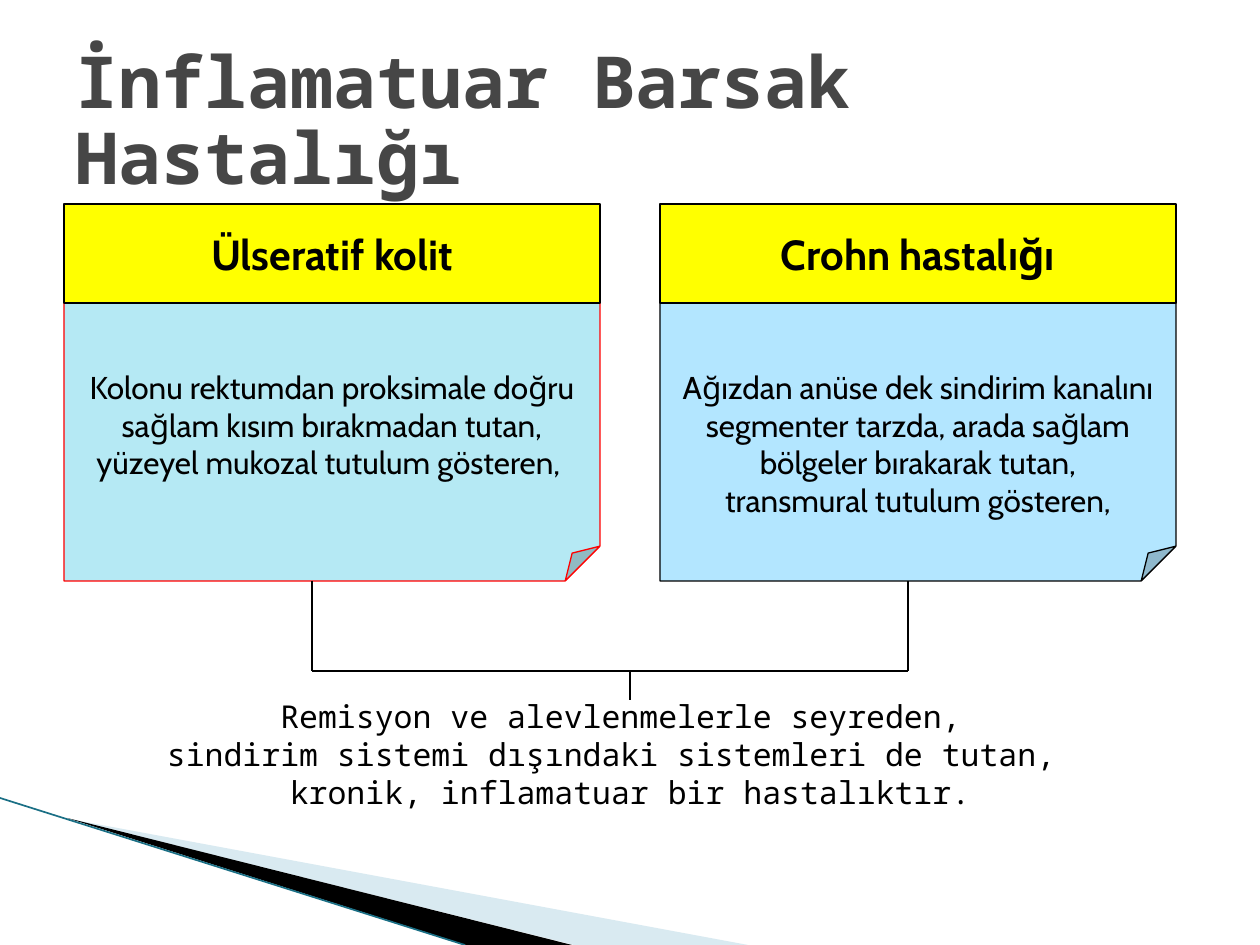
import pptx
import pptx.dml.color
import pptx.enum.shapes
import pptx.enum.text
import pptx.oxml
import pptx.oxml.ns
import pptx.util

RGBColor = pptx.dml.color.RGBColor
MSO_SHAPE = pptx.enum.shapes.MSO_SHAPE
PP_ALIGN = pptx.enum.text.PP_ALIGN
MSO_ANCHOR = pptx.enum.text.MSO_ANCHOR

BLACK = RGBColor(0x00, 0x00, 0x00)
RED = RGBColor(0xFF, 0x00, 0x00)
YELLOW = RGBColor(0xFF, 0xFF, 0x00)
AQUA = RGBColor(0xB5, 0xE9, 0xF4)
SKY = RGBColor(0xB3, 0xE6, 0xFF)
MIST = RGBColor(0xA0, 0xCB, 0xDC)
TEAL = RGBColor(0x1A, 0x6F, 0x85)
TITLE_GRAY = RGBColor(0x46, 0x46, 0x46)

BODY_FONT = "Cabin"
MONO_FONT = "Noto Sans Mono"
SLIDE_WIDTH, SLIDE_HEIGHT = 1260, 945
HEADER_TOP, HEADER_HEIGHT = 204, 99
NOTE_TOP, NOTE_HEIGHT = HEADER_TOP + HEADER_HEIGHT, 278
NOTE_BOTTOM = NOTE_TOP + NOTE_HEIGHT
BRACKET_LEFT, BRACKET_RIGHT, BRACKET_TOP = 312, 908, 671


def px(length):
    """Turn pixels at 126 to the inch into EMU."""
    return pptx.util.Emu(round(length * 914400 / 126))


def append_xml(parent, tag, attributes=""):
    """Append an empty DrawingML element to a parent element."""
    parent.append(pptx.oxml.parse_xml(
        f"<a:{tag} {pptx.oxml.ns.nsdecls('a')} {attributes}/>"))


def write_text(shape, lines, *, font, size, color=BLACK, bold=False,
               align=PP_ALIGN.CENTER, anchor=MSO_ANCHOR.MIDDLE,
               wrap=True, line_spacing=None):
    """Fill a shape with one formatted paragraph per line."""
    frame = shape.text_frame
    frame.auto_size = pptx.enum.text.MSO_AUTO_SIZE.NONE
    frame.word_wrap = wrap
    frame.vertical_anchor = anchor
    for index, line in enumerate(lines):
        paragraph = frame.paragraphs[0] if index == 0 else frame.add_paragraph()
        paragraph.alignment = align
        paragraph.line_spacing = line_spacing
        run = paragraph.add_run()
        run.text = line
        run.font.name = font
        run.font.size = pptx.util.Pt(size)
        run.font.bold = bold
        run.font.color.rgb = color


def add_box(slide, kind, left, top, width, height, fill, outline):
    """Add a filled preset shape with a thin outline."""
    shape = slide.shapes.add_shape(kind, px(left), px(top), px(width), px(height))
    shape.shadow.inherit = False
    shape.fill.solid()
    shape.fill.fore_color.rgb = fill
    shape.line.color.rgb = outline
    shape.line.width = pptx.util.Pt(0.75)
    return shape


def add_line(slide, start, end, color=BLACK, width=1.25):
    """Add a straight line without a shadow."""
    line = slide.shapes.add_connector(
        pptx.enum.shapes.MSO_CONNECTOR.STRAIGHT, *map(px, start + end))
    line.line.color.rgb = color
    line.line.width = pptx.util.Pt(width)
    append_xml(line._element.spPr, "effectLst")


def add_wedge(slide, points, color, opacity=100):
    """Add a closed polygon with an optionally transparent fill."""
    corners = [(px(x), px(y)) for x, y in points]
    builder = slide.shapes.build_freeform(*corners[0], scale=1.0)
    builder.add_line_segments(corners[1:], close=True)
    shape = builder.convert_to_shape()
    shape.shadow.inherit = False
    shape.line.fill.background()
    shape.fill.solid()
    shape.fill.fore_color.rgb = color
    if opacity < 100:
        fill_color = shape._element.spPr.find(".//" + pptx.oxml.ns.qn("a:srgbClr"))
        append_xml(fill_color, "alpha", f'val="{opacity * 1000}"')


def add_corner_decoration(slide):
    """Draw the wedges in the lower left corner."""
    add_wedge(slide, [(69, 819), (748, 945), (574, 945)], MIST, opacity=40)
    add_wedge(slide, [(67, 818), (572, 945), (466, 945)], BLACK)
    add_line(slide, (0, 798), (465, 945), color=TEAL, width=0.95)


def add_disease(slide, name, lines, left, width, fill, outline, text_drop=0):
    """Add a disease header above its folded note."""
    note = add_box(slide, MSO_SHAPE.FOLDED_CORNER, left, NOTE_TOP, width,
                   NOTE_HEIGHT, fill, outline)
    adjustments = note._element.spPr.find(".//" + pptx.oxml.ns.qn("a:avLst"))
    append_xml(adjustments, "gd", 'name="adj" fmla="val 12500"')
    note.text_frame.margin_top = px(6 + text_drop)
    write_text(note, lines, font=BODY_FONT, size=18)
    header = add_box(slide, MSO_SHAPE.RECTANGLE, left, HEADER_TOP, width,
                     HEADER_HEIGHT, YELLOW, BLACK)
    write_text(header, [name], font=BODY_FONT, size=24, bold=True, wrap=False)


def add_bracket(slide):
    """Join both notes to the shared summary."""
    add_line(slide, (BRACKET_LEFT, NOTE_BOTTOM), (BRACKET_LEFT, BRACKET_TOP))
    add_line(slide, (BRACKET_LEFT, BRACKET_TOP), (BRACKET_RIGHT, BRACKET_TOP))
    add_line(slide, (BRACKET_RIGHT, BRACKET_TOP), (BRACKET_RIGHT, NOTE_BOTTOM))
    add_line(slide, (630, BRACKET_TOP), (630, 700))


def add_summary(slide):
    """Add the text shared by both diseases."""
    box = slide.shapes.add_textbox(px(124), px(691), px(993), px(126))
    write_text(box, ["Remisyon ve alevlenmelerle seyreden,",
                     "sindirim sistemi dışındaki sistemleri de tutan, ",
                     " kronik, inflamatuar bir hastalıktır."],
               font=MONO_FONT, size=18, anchor=MSO_ANCHOR.TOP)


def format_title(slide):
    """Place the title in front of the other shapes."""
    title = slide.shapes.title
    title.left, title.top, title.width, title.height = map(px, (63, 45, 1134, 157))
    write_text(title, ["İnflamatuar Barsak Hastalığı"], font=MONO_FONT, size=41,
               color=TITLE_GRAY, bold=True, align=PP_ALIGN.LEFT, line_spacing=0.88)
    title._element.getparent().append(title._element)


def main():
    """Build and save the slide."""
    presentation = pptx.Presentation()
    presentation.slide_width = px(SLIDE_WIDTH)
    presentation.slide_height = px(SLIDE_HEIGHT)
    slide = presentation.slides.add_slide(presentation.slide_layouts[5])
    add_corner_decoration(slide)
    add_disease(slide, "Ülseratif kolit",
                ["Kolonu rektumdan proksimale doğru sağlam kısım bırakmadan tutan,",
                 "yüzeyel mukozal tutulum gösteren, "],
                64, 536, AQUA, RED)
    add_disease(slide, "Crohn hastalığı",
                ["Ağızdan anüse dek sindirim kanalını segmenter tarzda, "
                 "arada sağlam bölgeler bırakarak tutan,",
                 "transmural tutulum gösteren,"],
                660, 516, SKY, BLACK, text_drop=38)
    add_bracket(slide)
    add_summary(slide)
    format_title(slide)
    presentation.save("out.pptx")


if __name__ == "__main__":
    main()
